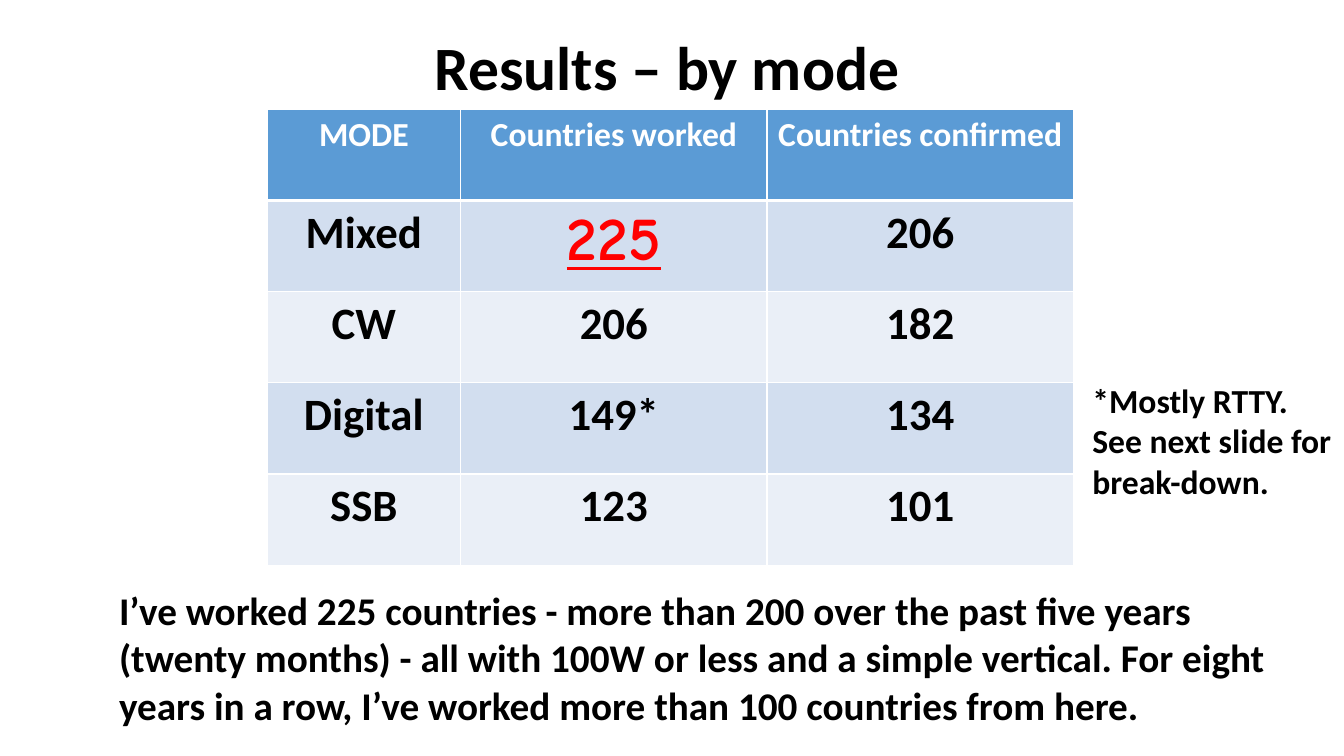
import pptx
import pptx.util
import pptx.dml.color
import pptx.enum.text
import lxml.etree
import pptx.oxml.ns

Cm, Pt = pptx.util.Cm, pptx.util.Pt
Align = pptx.enum.text.PP_ALIGN
Anchor = pptx.enum.text.MSO_ANCHOR
qn = pptx.oxml.ns.qn

HEAD, ODD, EVEN = "5B9BD5", "D2DEEF", "EAEFF7"
ROWS = [
    ("MODE", "Countries worked", "Countries confirmed"),
    ("Mixed", "225", "206"),
    ("CW", "206", "182"),
    ("Digital", "149*", "134"),
    ("SSB", "123", "101"),
]
BEST = (1, 1)


def color(code):
    return pptx.dml.color.RGBColor.from_string(code)


def write(frame, text, size=24, font="Calibri", fill="000000", bold=True,
          under=False, align=Align.LEFT, space=1.0):
    """Fill a text frame, one paragraph per line."""
    for i, line in enumerate(text.split("\n")):
        para = frame.paragraphs[0] if i == 0 else frame.add_paragraph()
        para.alignment = align
        para.line_spacing = space
        run = para.add_run()
        run.text = line
        run.font.size = Pt(size)
        run.font.name = font
        run.font.bold = bold
        run.font.underline = under
        run.font.color.rgb = color(fill)


class Deck:
    def __init__(self):
        self.show = pptx.Presentation()
        self.show.slide_width = Cm(33.87)
        self.show.slide_height = Cm(19.05)
        self.slide = self.show.slides.add_slide(self.show.slide_layouts[5])

    def title(self, text, left, top, width, height):
        shape = self.slide.shapes.title
        shape.left, shape.top = Cm(left), Cm(top)
        shape.width, shape.height = Cm(width), Cm(height)
        shape.text_frame.vertical_anchor = Anchor.MIDDLE
        write(shape.text_frame, text, size=44, align=Align.CENTER, space=0.9)

    def note(self, text, left, top, width, height, wrap=True, **style):
        box = self.slide.shapes.add_textbox(
            Cm(left), Cm(top), Cm(width), Cm(height))
        box.text_frame.word_wrap = wrap
        write(box.text_frame, text, **style)

    def border(self, cell, below):
        """Draw white lines on all four sides of a cell."""
        props = cell._tc.get_or_add_tcPr()
        for i, side in enumerate(("lnL", "lnR", "lnT", "lnB")):
            wide = below if side == "lnB" else 1
            line = lxml.etree.Element(qn("a:" + side), w=str(Pt(wide)))
            fill = lxml.etree.SubElement(line, qn("a:solidFill"))
            lxml.etree.SubElement(fill, qn("a:srgbClr"), val="FFFFFF")
            props.insert(i, line)

    def table(self, rows, left, top, widths, height):
        table = self.slide.shapes.add_table(
            len(rows), len(widths), Cm(left), Cm(top),
            Cm(sum(widths)), Cm(height * len(rows))).table
        for col, width in zip(table.columns, widths):
            col.width = Cm(width)
        for r, row in enumerate(rows):
            table.rows[r].height = Cm(height)
            for c, text in enumerate(row):
                cell = table.cell(r, c)
                cell.margin_left = cell.margin_right = Cm(0.2)
                cell.fill.solid()
                shade = HEAD if r == 0 else (EVEN, ODD)[r % 2]
                cell.fill.fore_color.rgb = color(shade)
                self.border(cell, 3 if r == 0 else 1)
                if r == 0:
                    style = dict(size=24, fill="FFFFFF")
                elif (r, c) == BEST:
                    style = dict(size=44, font="Comic Neue",
                                 fill="FF0000", under=True)
                else:
                    style = dict(size=32)
                write(cell.text_frame, text, align=Align.CENTER, **style)


def main():
    deck = Deck()

    # Title
    deck.title("Results – by mode", 2.21, 0, 29.21, 3.56)

    # Results table
    deck.table(ROWS, 6.73, 2.75, (4.88, 7.72, 7.72), 2.3)

    # Summary and footnote
    deck.note("I’ve worked 225 countries - more than 200 over the past five "
              "years (twenty months) - all with 100W or less and a simple "
              "vertical. For eight years in a row, I’ve worked more than 100 "
              "countries from here.", 2.75, 14.66, 30.75, 3.84, size=28)
    deck.note("*Mostly RTTY.\nSee next slide for\nbreak-down.",
              27.28, 9.45, 6.6, 3.33, wrap=False)

    deck.show.save("out.pptx")


if __name__ == "__main__":
    main()
